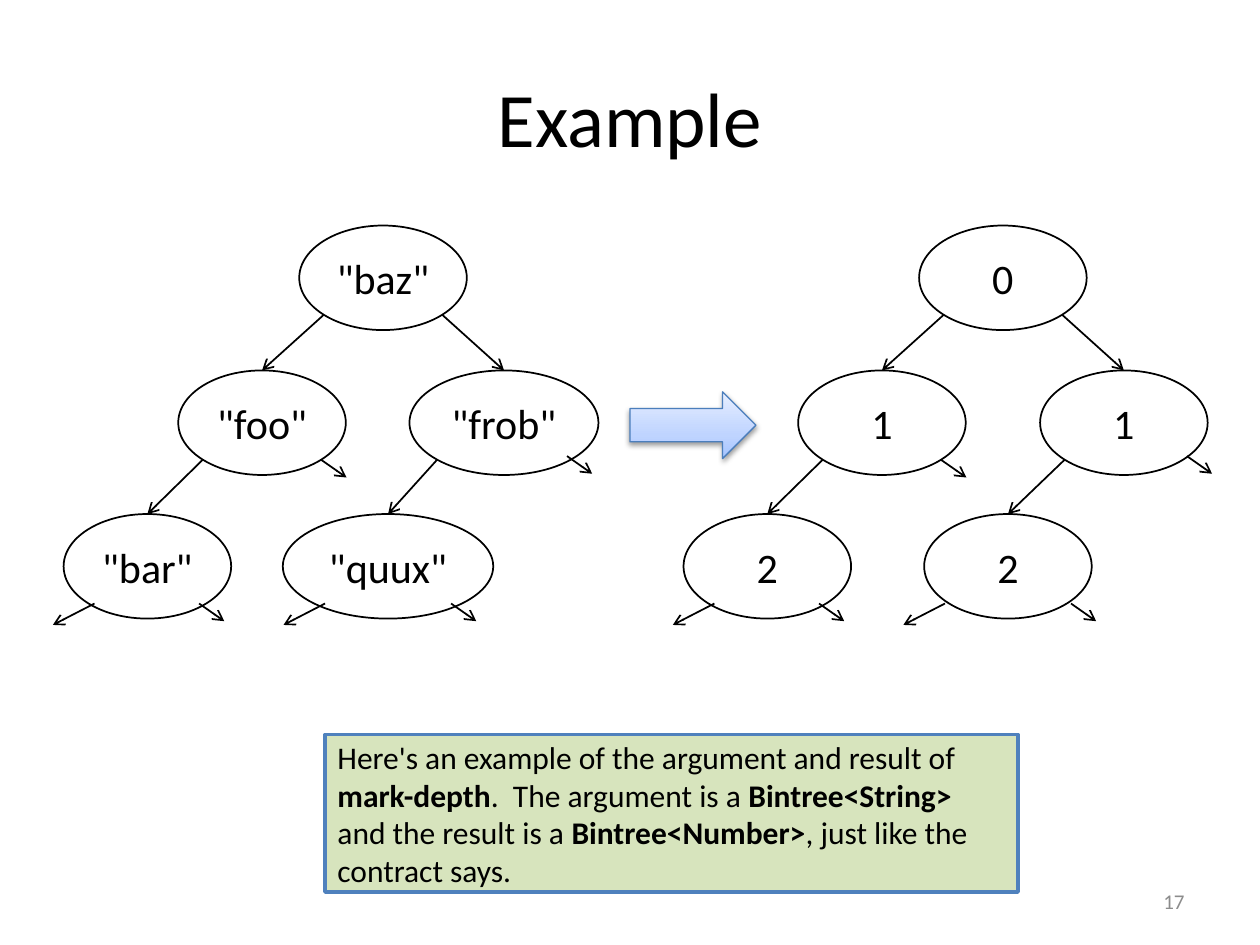
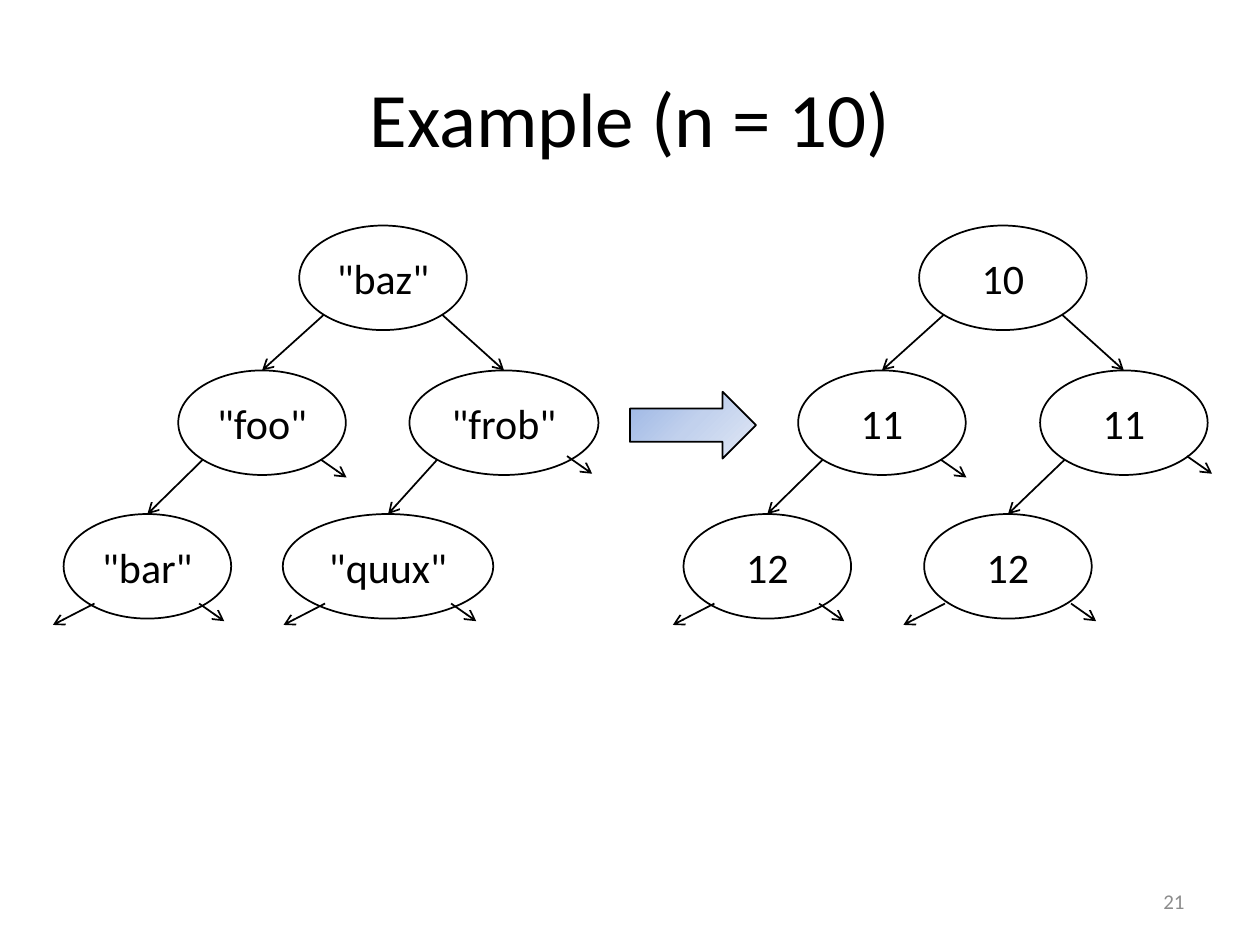
"""Build two slides that map a tree of strings to a tree of depths."""
import math

import lxml.etree
import pptx
import pptx.dml.color
import pptx.enum.shapes
import pptx.enum.text
import pptx.oxml.ns
import pptx.util
from pptx.util import Inches

HUES = {"ink": "000000", "gray": "8C8C8C", "note": "D7E4BD", "edge": "4F81BD", "rim": "4B7EBC"}
FONT = "Calibri"
KINDS = pptx.enum.shapes.MSO_SHAPE
ALIGN = pptx.enum.text.PP_ALIGN
NODE_W, NODE_H = 1.33, 0.83
SHIFT = 4.92
SLANT = math.sqrt(0.5) / 2
TOPS = (1.79, 2.94, 4.08)
NODES = {"bar": (1.17, 2), "quux": (3.08, 2), "foo": (2.08, 1), "frob": (4, 1), "baz": (3.04, 0)}
WIDE = {"quux": 1.67, "frob": 1.5}
LINKS = (("baz", "foo"), ("baz", "frob"), ("foo", "bar"), ("frob", "quux"))
STUBS = ((2.55, 3.65, 1), (3.58, 4.79, 1), (4.5, 3.62, 1), (1.58, 4.79, 1),
         (0.75, 4.79, -1), (2.58, 4.79, -1))
REACH = {1: (0.2, 0.14), -1: (-0.33, 0.17)}
NOTE = (("Here's an example of the argument and result of ", False), ("mark-depth", True),
        (".  The argument is a ", False), ("Bintree<String>", True),
        (" and the result is a ", False), ("Bintree<Number>", True),
        (", just like the contract says.", False))


def color(name):
    return pptx.dml.color.RGBColor.from_string(HUES[name])


def add(host, tag, **traits):
    return lxml.etree.SubElement(host, pptx.oxml.ns.qn(f"a:{tag}"), **traits)


def find(host, tag):
    return host.find(pptx.oxml.ns.qn(f"a:{tag}"))


class Deck:
    """Hold the shared style and the current slide."""

    def __init__(self):
        self.show = pptx.Presentation()
        self.show.slide_width, self.show.slide_height = Inches(10), Inches(7.5)

    def start(self, title, page):
        self.slide = self.show.slides.add_slide(self.show.slide_layouts[6])
        self.label(title, (0.5, 0.3, 9, 1.25), 44, ALIGN.CENTER)
        self.label(page, (7.17, 6.95, 2.33, 0.4), 12, ALIGN.RIGHT, "gray")

    def fill_text(self, shape, runs, size, align, hue="ink", wrap=True):
        frame = shape.text_frame
        frame.word_wrap = wrap
        frame.vertical_anchor = pptx.enum.text.MSO_ANCHOR.MIDDLE
        para = frame.paragraphs[0]
        para.alignment = align
        para.font.name, para.font.size = FONT, pptx.util.Pt(size)
        para.font.color.rgb = color(hue)
        for text, bold in runs:
            run = para.add_run()
            run.text = text
            if bold:
                run.font.bold = True

    def label(self, text, box, size, align, hue="ink"):
        shape = self.slide.shapes.add_textbox(*map(Inches, box))
        self.fill_text(shape, [(text, False)], size, align, hue)

    def form(self, home, kind, box, line="ink", width=1, fill=None):
        shape = home.add_shape(kind, *map(Inches, box))
        shape.shadow.inherit = False
        shape.line.color.rgb = color(line)
        shape.line.width = pptx.util.Pt(width)
        if fill:
            shape.fill.solid()
            shape.fill.fore_color.rgb = color(fill)
        else:
            shape.fill.background()
        return shape

    def arrow(self, home, start, end):
        link = home.add_connector(pptx.enum.shapes.MSO_CONNECTOR.STRAIGHT,
                                  *map(Inches, (*start, *end)))
        link.line.color.rgb = color("ink")
        link.line.width = pptx.util.Pt(1)
        props = link._element.spPr
        add(find(props, "ln"), "tailEnd", type="arrow")
        add(props, "effectLst")

    def tree(self, words, shift=0, sizes={}):
        home = self.slide.shapes.add_group_shape().shapes
        for name, (mid, row) in NODES.items():
            wide = sizes.get(name, NODE_W)
            oval = self.form(home, KINDS.OVAL, (mid + shift - wide / 2, TOPS[row], wide, NODE_H))
            self.fill_text(oval, [(words[name], False)], 24, ALIGN.CENTER, wrap=False)
        for top, low in LINKS:
            (mid, row), (goal, level) = NODES[top], NODES[low]
            side = math.copysign(SLANT * sizes.get(top, NODE_W), goal - mid)
            self.arrow(home, (mid + shift + side, TOPS[row] + NODE_H * (0.5 + SLANT)),
                       (goal + shift, TOPS[level]))
        for left, top, side in STUBS:
            run, drop = REACH[side]
            self.arrow(home, (left + shift, top), (left + shift + run, top + drop))

    def block(self, stops, angle, line, width, shade):
        shape = self.form(self.slide.shapes, KINDS.RIGHT_ARROW, (5, 3.11, 1, 0.53), line, width)
        shape.fill.gradient()
        props = shape._element.spPr
        grad = find(props, "gradFill")
        for part in list(grad):
            grad.remove(part)
        steps = add(grad, "gsLst")
        for spot, hue in stops:
            add(add(steps, "gs", pos=str(spot * 1000)), "srgbClr", val=hue)
        add(grad, "lin", ang=str(angle * 60000), scaled="0")
        if shade:
            cast = add(find(props, "effectLst"), "outerShdw", blurRad="40000", dist="20000",
                       dir="5400000", rotWithShape="0")
            add(add(cast, "srgbClr", val=HUES["ink"]), "alpha", val="38000")

    def note(self, runs):
        box = self.form(self.slide.shapes, KINDS.RECTANGLE, (2.58, 5.83, 5.5, 1.25),
                        "edge", 2, "note")
        self.fill_text(box, runs, 18, ALIGN.LEFT)

    def sample(self, title, page, base, **look):
        self.start(title, page)
        self.tree({name: str(base + row) for name, (_, row) in NODES.items()}, SHIFT)
        self.block(**look)
        self.tree({name: f'"{name}"' for name in NODES}, sizes=WIDE)


def main():
    deck = Deck()
    deck.sample("Example", "17", 0, stops=((0, "A4C4FF"), (35, "BFD4FF"), (100, "E6EEFF")),
                angle=270, line="rim", width=0.75, shade=True)
    deck.note(NOTE)
    deck.sample("Example (n = 10)", "21", 10,
                stops=((0, "9AB5E4"), (50, "C2D1ED"), (100, "E1E8F5")),
                angle=45, line="ink", width=1, shade=False)
    deck.show.save("out.pptx")


if __name__ == "__main__":
    main()
